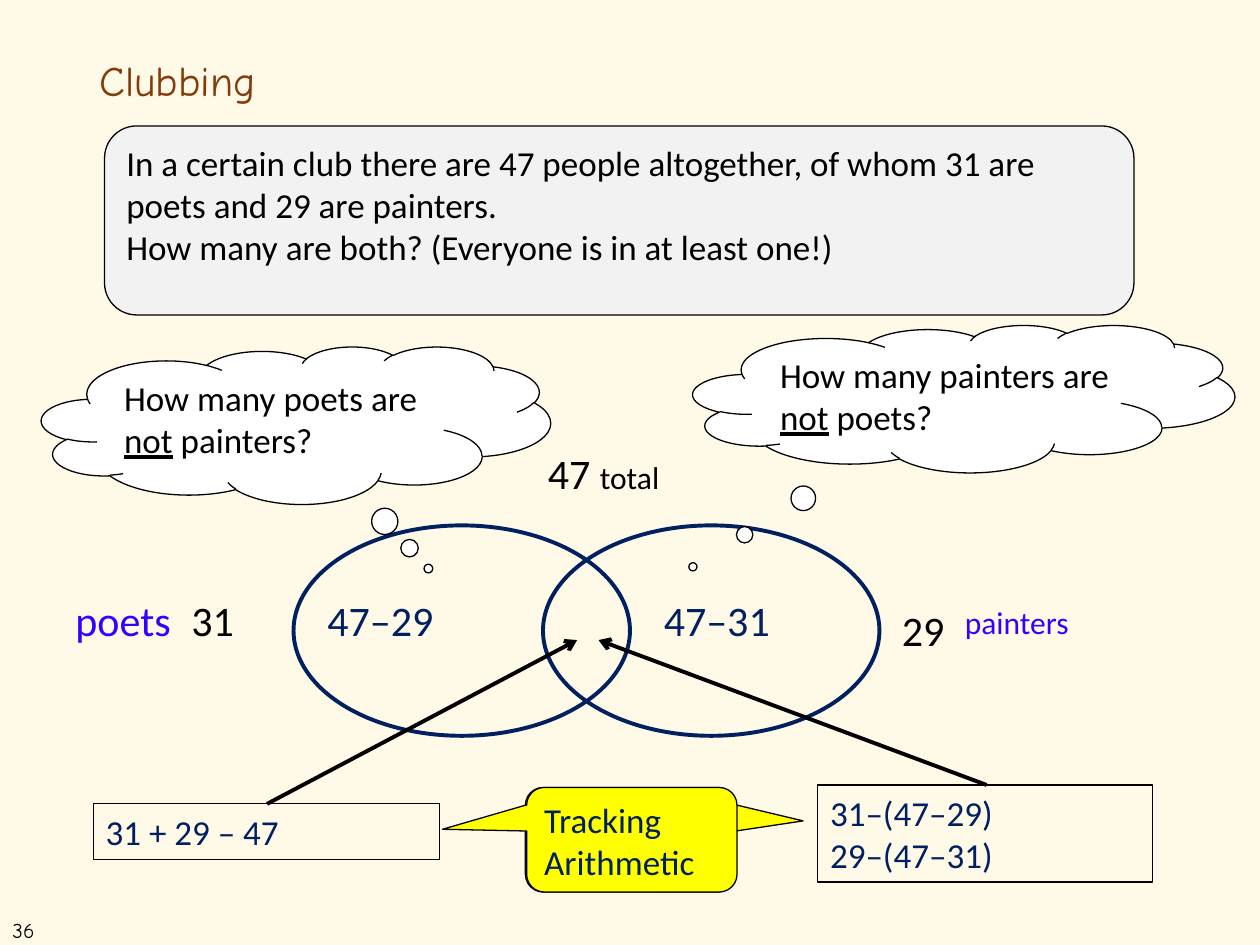
from dataclasses import dataclass
from typing import Optional

from lxml import etree
from pptx import Presentation
from pptx.dml.color import RGBColor
from pptx.enum.shapes import MSO_CONNECTOR, MSO_SHAPE
from pptx.enum.text import MSO_ANCHOR, PP_ALIGN
from pptx.oxml.ns import qn
from pptx.util import Inches, Pt

CREAM = RGBColor(0xFF, 0xF9, 0xE8)
BROWN = RGBColor(0x84, 0x3C, 0x0B)
BLACK = RGBColor(0, 0, 0)
NAVY = RGBColor(0, 0x20, 0x60)
VIOLET = RGBColor(0x34, 0, 0xFF)
GREY = RGBColor(0xF2, 0xF2, 0xF2)
WHITE = RGBColor(0xFF, 0xFF, 0xFF)
YELLOW = RGBColor(0xFF, 0xFF, 0)

RECTANGLE = MSO_SHAPE.RECTANGLE
ELLIPSE = MSO_SHAPE.OVAL
CLOUD = MSO_SHAPE.CLOUD_CALLOUT
CALLOUT = MSO_SHAPE.ROUNDED_RECTANGULAR_CALLOUT
STRAIGHT = MSO_CONNECTOR.STRAIGHT
TOP, MIDDLE = MSO_ANCHOR.TOP, MSO_ANCHOR.MIDDLE
LEFT = PP_ALIGN.LEFT

BODY_FONT, HAND_FONT = "Calibri", "Comic Neue"
Place = tuple[float, float, float, float]


@dataclass
class Span:
    text: str
    size: float = 20
    color: RGBColor = BLACK
    font: str = BODY_FONT
    underline: bool = False


@dataclass
class Label:
    place: Place
    spans: list[Span]
    wrap: bool = True
    anchor: MSO_ANCHOR = TOP


@dataclass
class Figure:
    kind: MSO_SHAPE
    place: Place
    paragraphs: list[list[Span]]
    fill: Optional[RGBColor] = None
    line: RGBColor = BLACK
    line_width: float = 0.75
    adjustments: tuple[float, ...] = ()


@dataclass
class Arrow:
    start: tuple[float, float]
    end: tuple[float, float]


def question(group: str, other: str) -> list[list[Span]]:
    return [[Span(f"How many {group} are "), Span("not", underline=True),
             Span(f" {other}?")]]


LABELS = [
    Label((0, 7.23, 0.49, 0.3), [Span("36", 12, font=HAND_FONT)]),
    Label((0.69, 0.4, 8.62, 0.47), [Span("Clubbing", 24, BROWN, HAND_FONT)], anchor=MIDDLE),
    Label((4.25, 3.5, 1.67, 0.5), [Span("47 ", 24), Span("total", 18)]),
    Label((5.17, 4.67, 1.25, 0.5), [Span("47–31", 24, NAVY)]),
    Label((2.5, 4.67, 1.58, 0.5), [Span("47–29", 24, NAVY)]),
    Label((1.42, 4.67, 0.58, 0.5), [Span("31", 24)]),
    Label((0.5, 4.67, 1.01, 0.5), [Span("poets", 24, VIOLET)], wrap=False),
    Label((7.06, 4.75, 0.83, 0.5), [Span("29", 24)]),
    Label((7.56, 4.74, 1.63, 0.57), [Span("painters", 18, VIOLET)], wrap=False),
]

VENN = [Figure(ELLIPSE, (left, 4.17, 2.67, 1.67), [], line=NAVY, line_width=2.25)
        for left in (2.33, 4.31)]

PUZZLE = Figure(
    CALLOUT, (0.83, 1, 8.17, 1.5),
    [[Span("In a certain club there are 47 people altogether, of whom 31 are "
           "poets and 29 are painters.")],
     [Span("How many are both? (Everyone is in at least one!)")]],
    GREY, adjustments=(-0.21, 0.5, 0.17))

CLOUDS = [
    Figure(CLOUD, (0.33, 2.75, 4.04, 1.25), question("poets", "painters"),
           WHITE, adjustments=(0.26, 0.91)),
    Figure(CLOUD, (5.5, 2.58, 4.3, 1.17), question("painters", "poets"),
           WHITE, adjustments=(-0.5, 1.14)),
]

ANSWERS = [
    Figure(RECTANGLE, (6.49, 6.23, 2.66, 0.77),
           [[Span("31–(47–29)", color=NAVY)], [Span("29–(47–31)", color=NAVY)]]),
    Figure(RECTANGLE, (0.74, 6.38, 2.75, 0.44), [[Span("31 + 29 – 47", color=NAVY)]]),
]

ARROWS = [Arrow((7.83, 6.23), (4.75, 5.08)), Arrow((2.12, 6.38), (4.58, 5.08))]

# Two overlapping callouts give one box with a pointer on each side.
TRACKING = [
    Figure(CALLOUT, (4.17, 6.25, 1.67, 0.83), [], YELLOW, adjustments=(0.82, -0.18, 0.17)),
    Figure(CALLOUT, (4.18, 6.25, 1.67, 0.83), [[Span("Tracking Arithmetic", color=NAVY)]],
           YELLOW, adjustments=(-0.9, -0.1, 0.17)),
]


def write(frame, paragraphs: list[list[Span]], wrap: bool = True,
          anchor: MSO_ANCHOR = TOP) -> None:
    frame.word_wrap = wrap
    frame.vertical_anchor = anchor
    for index, spans in enumerate(paragraphs):
        para = frame.add_paragraph() if index else frame.paragraphs[0]
        para.alignment = LEFT
        for span in spans:
            run = para.add_run()
            run.text = span.text
            run.font.name = span.font
            run.font.size = Pt(span.size)
            run.font.color.rgb = span.color
            if span.underline:
                run.font.underline = True


def draw_label(page, label: Label) -> None:
    box = page.shapes.add_textbox(*map(Inches, label.place))
    write(box.text_frame, [label.spans], label.wrap, label.anchor)


def draw_figure(page, figure: Figure) -> None:
    shape = page.shapes.add_shape(figure.kind, *map(Inches, figure.place))
    shape.shadow.inherit = False
    for index, value in enumerate(figure.adjustments):
        shape.adjustments[index] = value
    if figure.fill is None:
        shape.fill.background()
    else:
        shape.fill.solid()
        shape.fill.fore_color.rgb = figure.fill
    shape.line.color.rgb = figure.line
    shape.line.width = Pt(figure.line_width)
    write(shape.text_frame, figure.paragraphs)


def draw_arrow(page, arrow: Arrow) -> None:
    connector = page.shapes.add_connector(
        STRAIGHT, *map(Inches, arrow.start + arrow.end))
    connector.line.color.rgb = BLACK
    connector.line.width = Pt(2.25)
    properties = connector.line._get_or_add_ln()
    etree.SubElement(properties, qn("a:tailEnd"), type="arrow")
    etree.SubElement(connector._element.spPr, qn("a:effectLst"))


def main() -> None:
    deck = Presentation()
    deck.slide_width, deck.slide_height = Inches(10), Inches(7.5)
    page = deck.slides.add_slide(deck.slide_layouts[6])
    page.background.fill.solid()
    page.background.fill.fore_color.rgb = CREAM

    for label in LABELS:
        draw_label(page, label)
    for figure in [*VENN, PUZZLE, *CLOUDS, *ANSWERS]:
        draw_figure(page, figure)
    for arrow in ARROWS:
        draw_arrow(page, arrow)
    for figure in TRACKING:
        draw_figure(page, figure)
    deck.save("out.pptx")


if __name__ == "__main__":
    main()
